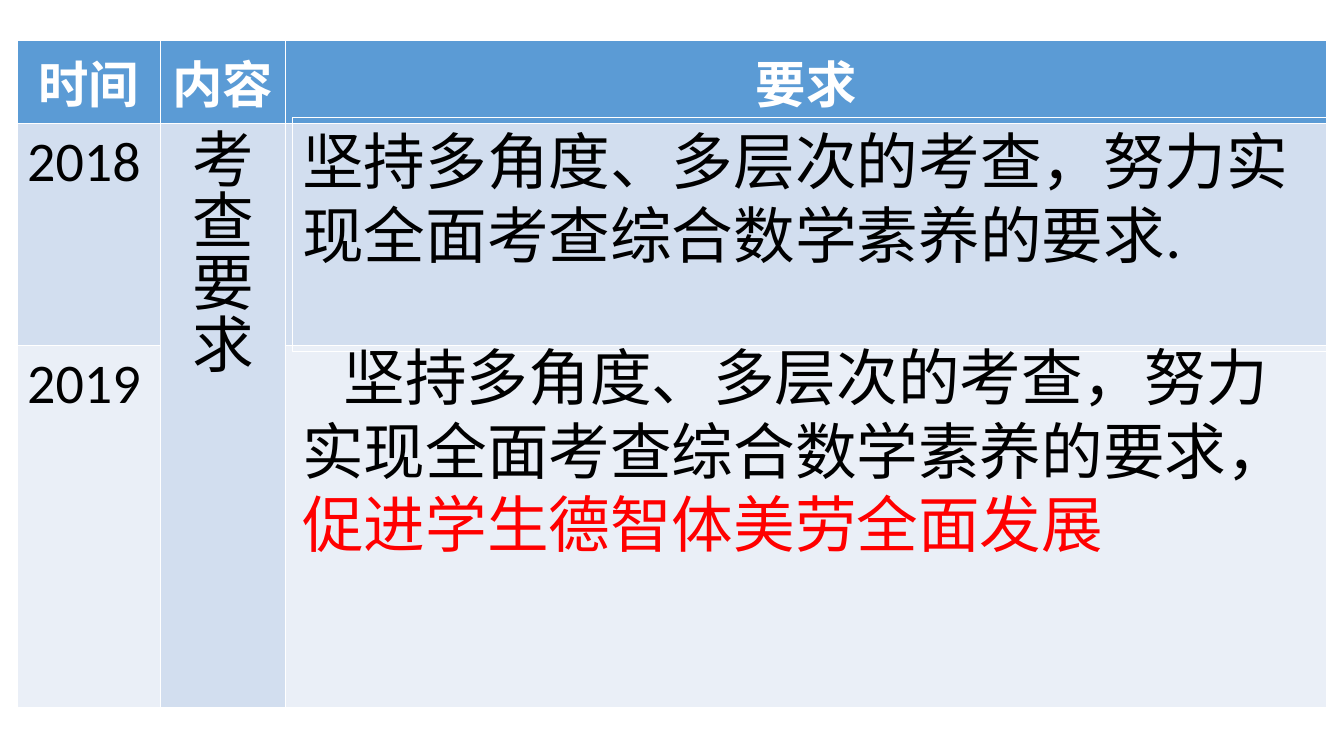
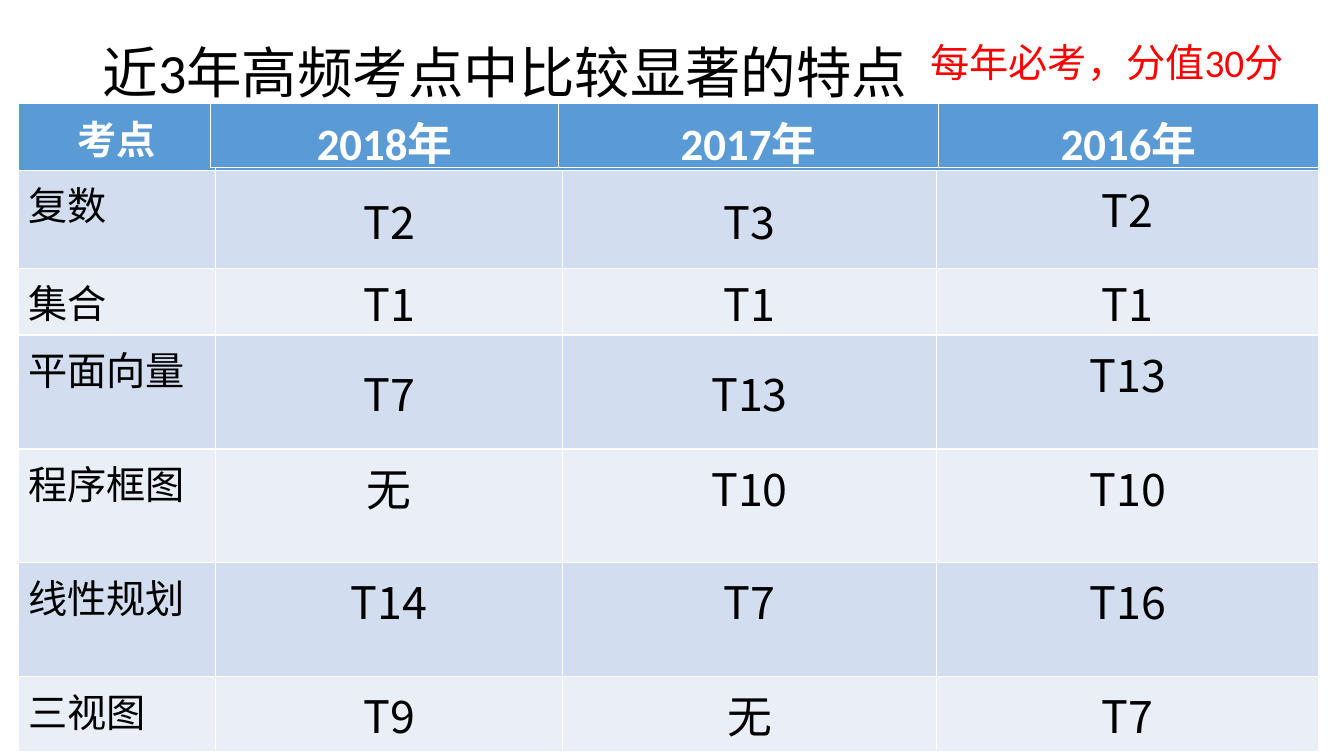
from dataclasses import dataclass

from pptx import Presentation
from pptx.dml.color import RGBColor
from pptx.enum.shapes import MSO_SHAPE
from pptx.enum.text import MSO_ANCHOR, MSO_AUTO_SIZE, PP_ALIGN
from pptx.util import Inches, Pt

LEFT, CENTER = PP_ALIGN.LEFT, PP_ALIGN.CENTER
TOP, MIDDLE = MSO_ANCHOR.TOP, MSO_ANCHOR.MIDDLE
TITLE_ONLY, BLANK = 5, 6


@dataclass(frozen=True)
class Theme:
    header: RGBColor = RGBColor(0x5B, 0x9B, 0xD5)
    bands: tuple = (RGBColor(0xD2, 0xDE, 0xEF), RGBColor(0xEA, 0xEF, 0xF7))
    white: RGBColor = RGBColor(255, 255, 255)
    ink: RGBColor = RGBColor(0, 0, 0)
    accent: RGBColor = RGBColor(255, 0, 0)
    font: str = "Calibri"
    answer_font: str = "Noto Sans CJK SC"
    requirement: float = 44
    year: float = 40
    title: float = 39.6
    heading: float = 36
    answer: float = 32
    topic: float = 28


THEME = Theme()

# Requirements slide
REQUIREMENT_HEADINGS = ["时间", "内容", "要求"]
YEARS = ["2018", "2019"]
CONTENT_LABEL = "考查要求"
REQUIREMENT_2018 = "坚持多角度、多层次的考查，努力实现全面考查综合数学素养的要求."
REQUIREMENT_2019 = "坚持多角度、多层次的考查，努力实现全面考查综合数学素养的要求，"
ADDED_IN_2019 = "促进学生德智体美劳全面发展"

# Frequent topics slide
TOPICS_TITLE = "近3年高频考点中比较显著的特点"
SCORE_NOTE = "每年必考，分值30分"
TOPIC_HEADING = "考点"
EXAM_YEARS = ["2018年", "2017年", "2016年"]
# topic, question numbers by year, how many of them are vertically centred
TOPICS = [
    ("复数", ["T2", "T3", "T2"], 2),
    ("集合", ["T1", "T1", "T1"], 3),
    ("平面向量", ["T7", "T13", "T13"], 2),
    ("程序框图", ["无", "T10", "T10"], 0),
    ("线性规划", ["T14", "T7", "T16"], 0),
    ("三视图", ["T9", "无", "T7"], 0),
]


def write(frame, runs, size, align=LEFT, font=THEME.font, bold=False):
    """Fill the first paragraph with (text, colour) runs and return it."""
    paragraph = frame.paragraphs[0]
    paragraph.alignment = align
    for text, color in runs:
        run = paragraph.add_run()
        run.text = text
        run.font.name = font
        run.font.size = Pt(size)
        run.font.bold = bold
        run.font.color.rgb = color
    return paragraph


def add_banded_table(slide, left, top, widths, heights):
    table = slide.shapes.add_table(
        len(heights), len(widths), Inches(left), Inches(top),
        Inches(sum(widths)), Inches(sum(heights))).table
    for column, width in zip(table.columns, widths):
        column.width = Inches(width)
    for index, (row, height) in enumerate(zip(table.rows, heights)):
        row.height = Inches(height)
        for cell in row.cells:
            cell.fill.solid()
            cell.fill.fore_color.rgb = (
                THEME.bands[(index - 1) % 2] if index else THEME.header)
    return table


def write_headings(table, headings, size):
    for column, heading in enumerate(headings):
        write(table.cell(0, column).text_frame, [(heading, THEME.white)],
              size, CENTER, bold=True)


def add_text(slide, left, top, width, height, runs, size):
    frame = slide.shapes.add_textbox(
        Inches(left), Inches(top), Inches(width), Inches(height)).text_frame
    frame.word_wrap = True
    return frame, write(frame, runs, size)


def build_requirements(prs):
    slide = prs.slides.add_slide(prs.slide_layouts[BLANK])
    table = add_banded_table(slide, 0.17, 0.4, [1.42, 1.24, 10.33],
                             [0.8, 2.2, 3.6])
    write_headings(table, REQUIREMENT_HEADINGS, THEME.heading)
    for row, year in enumerate(YEARS, start=1):
        write(table.cell(row, 0).text_frame, [(year, THEME.ink)], THEME.year)
    table.cell(1, 1).merge(table.cell(2, 1))

    panel = slide.shapes.add_shape(
        MSO_SHAPE.RECTANGLE, Inches(2.9), Inches(1.17), Inches(10.29), Inches(2.32))
    panel.shadow.inherit = False
    panel.fill.background()
    panel.line.color.rgb = THEME.white
    panel.line.width = Pt(0.75)
    panel.text_frame.word_wrap = True
    panel.text_frame.vertical_anchor = TOP
    write(panel.text_frame, [(REQUIREMENT_2018, THEME.ink)], THEME.requirement)

    _, paragraph = add_text(
        slide, 2.9, 3.31, 10.16, 3.06,
        [(REQUIREMENT_2019, THEME.ink), (ADDED_IN_2019, THEME.accent)],
        THEME.requirement)
    properties = paragraph._p.get_or_add_pPr()
    properties.set("marL", "0")
    properties.set("indent", str(Inches(0.41)))

    label, _ = add_text(slide, 1.67, 1.17, 0.94, 4.25,
                        [(CONTENT_LABEL, THEME.ink)], THEME.requirement)
    label._txBody.bodyPr.set("vert", "eaVert")


def build_topics(prs):
    slide = prs.slides.add_slide(prs.slide_layouts[TITLE_ONLY])
    title = slide.shapes.title
    title.left, title.top = Inches(0.92), Inches(0.4)
    title.width, title.height = Inches(11.5), Inches(1.45)
    title.text_frame.auto_size = MSO_AUTO_SIZE.NONE
    title.text_frame.vertical_anchor = TOP
    write(title.text_frame, [(TOPICS_TITLE, THEME.ink)],
          THEME.title).line_spacing = 0.9

    table = add_banded_table(slide, 0.18, 1.03, [1.96, 3.44, 3.71, 3.79],
                             [0.66, 0.97, 0.62, 1.13, 1.13, 1.13, 0.69])
    write_headings(table, [TOPIC_HEADING], THEME.topic)
    table.cell(0, 1).merge(table.cell(0, 3))
    for row, (topic, answers, centred) in enumerate(TOPICS, start=1):
        write(table.cell(row, 0).text_frame, [(topic, THEME.ink)], THEME.topic)
        for column, answer in enumerate(answers, start=1):
            cell = table.cell(row, column)
            if column <= centred:
                cell.vertical_anchor = MIDDLE
                cell.margin_left = cell.margin_right = 0
                cell.margin_top = cell.margin_bottom = 0
            write(cell.text_frame, [(answer, THEME.ink)], THEME.answer,
                  CENTER, THEME.answer_font)

    add_text(slide, 9.13, 0.33, 3.95, 0.57, [(SCORE_NOTE, THEME.accent)],
             THEME.topic)
    year_header = add_banded_table(slide, 2.09, 1.03, [3.45, 3.77, 3.77], [0.63])
    write_headings(year_header, EXAM_YEARS, THEME.answer)


def main():
    prs = Presentation()
    prs.slide_width, prs.slide_height = Inches(13.33), Inches(7.5)
    build_requirements(prs)
    build_topics(prs)
    prs.save("out.pptx")


if __name__ == "__main__":
    main()
